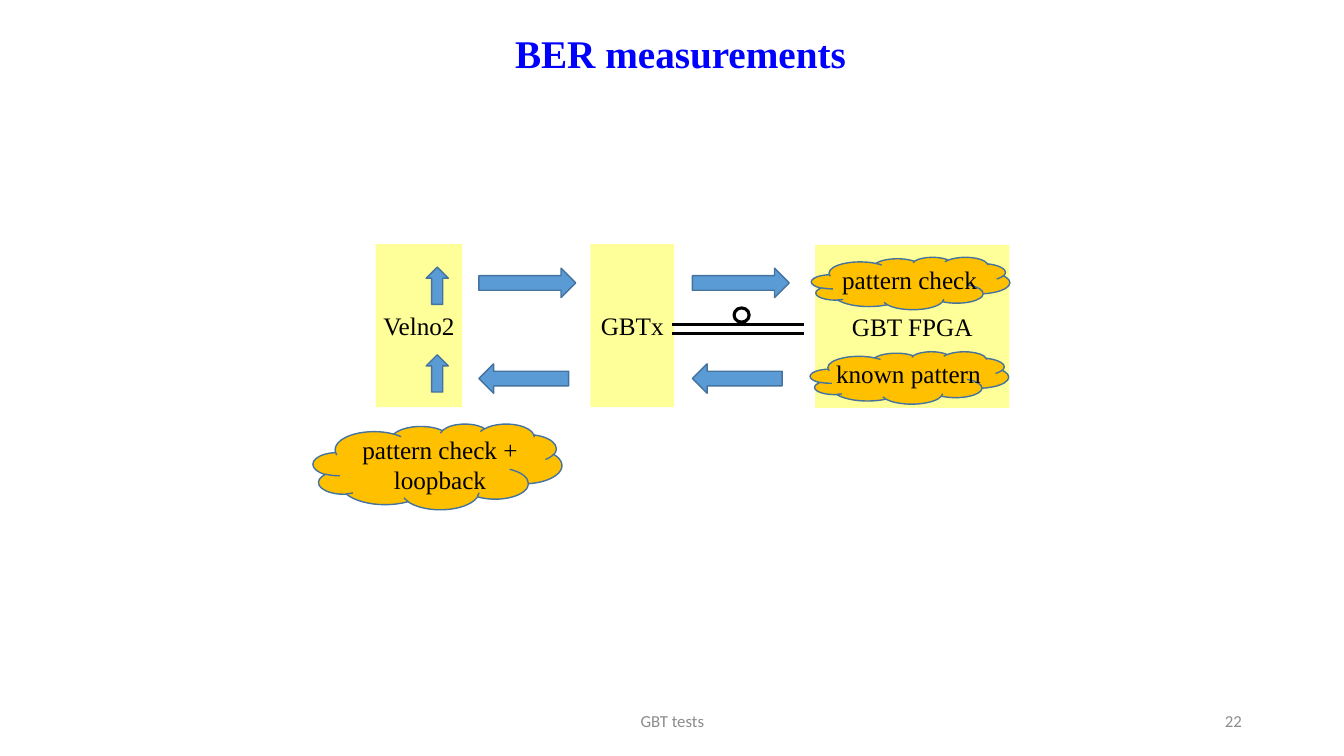
from lxml import etree
from pptx import Presentation
from pptx.dml.color import RGBColor
from pptx.enum.shapes import MSO_CONNECTOR, MSO_SHAPE
from pptx.enum.text import MSO_ANCHOR, PP_ALIGN
from pptx.oxml.ns import qn
from pptx.util import Cm, Pt

RECT, CLOUD, OVAL = MSO_SHAPE.RECTANGLE, MSO_SHAPE.CLOUD, MSO_SHAPE.OVAL
RIGHT, LEFT, UP = MSO_SHAPE.RIGHT_ARROW, MSO_SHAPE.LEFT_ARROW, MSO_SHAPE.UP_ARROW
STRAIGHT = MSO_CONNECTOR.STRAIGHT
TOP, MIDDLE = MSO_ANCHOR.TOP, MSO_ANCHOR.MIDDLE
ALIGN_LEFT, ALIGN_CENTER, ALIGN_RIGHT = PP_ALIGN.LEFT, PP_ALIGN.CENTER, PP_ALIGN.RIGHT

THEME = {
    "title": ("Times New Roman", 28, "0000FF", True),
    "label": ("Times New Roman", 18, "000000", False),
    "footer": ("Calibri", 12, "8C8C8C", False),
    "block": "FFFF99",
    "arrow": "5B9BD5",
    "cloud": "FFC000",
    "outline": ("43739E", 1),
    "fiber": ("000000", 2.25),
}

TITLE = ("BER measurements", (12.73, 0.61, 8.94, 1.45))
FOOTER = ("GBT tests", (11.23, 17.65, 11.43, 1.02))
PAGE_NUMBER = ("22", (23.93, 17.65, 7.62, 1.02))

BLOCK_HEIGHT = 4.11
BLOCKS = [
    ("Velno2", 9.47, 6.15, 2.18),
    ("GBTx", 14.88, 6.15, 2.11),
    ("GBT FPGA", 20.54, 6.17, 4.9),
]

LINK_COLUMNS = (12.07, 17.45)
LINK_ROWS = [(RIGHT, 6.76, 2.44), (LEFT, 9.17, 2.26)]
LINK_HEIGHT = 0.74
LOOPBACK_X, LOOPBACK_ROWS, LOOPBACK_SIZE = 10.74, (6.73, 8.94), (0.56, 0.94)

FIBER_LINES = [(8.41, 20.26), (8.18, 20.27)]
FIBER_START = 16.94
FIBER_LOOP = (18.5, 7.76, 0.38, 0.36)

CLOUDS = [
    ("known pattern", (20.42, 8.86, 5, 1.32), (20.8, 8.9, 4.19, 1.02), False),
    ("pattern check + loopback", (7.89, 10.68, 6.27, 2.16), (8.22, 10.82, 5.74, 2.95), True),
    ("pattern check", (20.45, 6.48, 5, 1.32), (20.93, 6.53, 3.99, 1.02), False),
]


def lengths(values):
    return [Cm(value) for value in values]


def write(frame, words, style, align, anchor, wrap):
    font_name, size, color, bold = THEME[style]
    frame.text = words
    frame.word_wrap = wrap
    frame.vertical_anchor = anchor
    paragraph = frame.paragraphs[0]
    paragraph.alignment = align
    font = paragraph.runs[0].font
    font.name, font.size, font.bold = font_name, Pt(size), bold
    font.color.rgb = RGBColor.from_string(color)


def add_words(slide, words, area, style="label", align=ALIGN_CENTER, anchor=TOP, wrap=True):
    frame = slide.shapes.add_textbox(*lengths(area)).text_frame
    write(frame, words, style, align, anchor, wrap)


def set_line(line, style):
    color, width = THEME[style]
    line.color.rgb = RGBColor.from_string(color)
    line.width = Pt(width)


def add_part(slide, preset, area, fill=None, outline=None):
    part = slide.shapes.add_shape(preset, *lengths(area))
    part.shadow.inherit = False
    if fill:
        part.fill.solid()
        part.fill.fore_color.rgb = RGBColor.from_string(THEME[fill])
    else:
        part.fill.background()
    if outline:
        set_line(part.line, outline)
    else:
        part.line.fill.background()
    return part


def main():
    deck = Presentation()
    deck.slide_width, deck.slide_height = Cm(33.87), Cm(19.05)
    slide = deck.slides.add_slide(deck.slide_layouts[6])

    add_words(slide, *FOOTER, "footer", ALIGN_CENTER, MIDDLE)
    add_words(slide, *PAGE_NUMBER, "footer", ALIGN_RIGHT, MIDDLE)
    add_words(slide, *TITLE, "title", ALIGN_LEFT, wrap=False)

    for words, left, top, width in BLOCKS:
        block = add_part(slide, RECT, (left, top, width, BLOCK_HEIGHT), "block")
        write(block.text_frame, words, "label", ALIGN_CENTER, MIDDLE, False)

    for y, end in FIBER_LINES:
        fiber = slide.shapes.add_connector(STRAIGHT, *lengths((FIBER_START, y, end, y)))
        set_line(fiber.line, "fiber")
        etree.SubElement(fiber._element.spPr, qn("a:effectLst"))
    add_part(slide, OVAL, FIBER_LOOP, outline="fiber")

    for direction, top, width in LINK_ROWS:
        for left in LINK_COLUMNS:
            add_part(slide, direction, (left, top, width, LINK_HEIGHT), "arrow", "outline")
    for top in LOOPBACK_ROWS:
        add_part(slide, UP, (LOOPBACK_X, top, *LOOPBACK_SIZE), "arrow", "outline")

    for words, cloud_area, words_area, wrap in CLOUDS:
        add_part(slide, CLOUD, cloud_area, "cloud", "outline")
        add_words(slide, words, words_area, wrap=wrap)

    deck.save("out.pptx")


if __name__ == "__main__":
    main()
